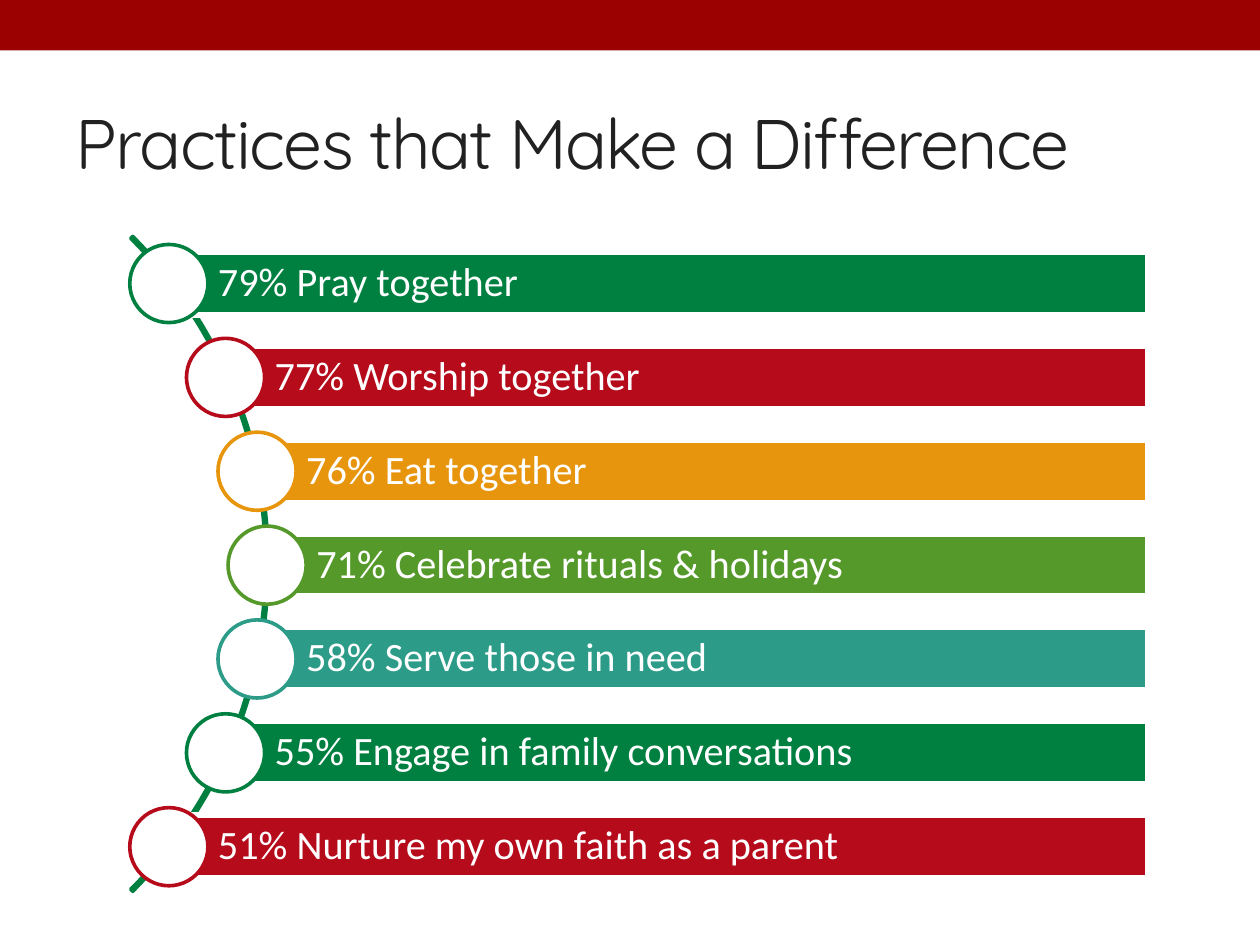
import pptx
import pptx.dml.color
import pptx.enum.shapes
import pptx.enum.text
import pptx.util
from dataclasses import dataclass

Inches = pptx.util.Inches
Pt = pptx.util.Pt
Shapes = pptx.enum.shapes.MSO_SHAPE


@dataclass(frozen=True)
class Theme:
    banner: str = "9B0101"
    title: str = "212121"
    white: str = "FFFFFF"
    green: str = "008040"
    red: str = "B50B1B"
    orange: str = "E8950E"
    lime: str = "55992B"
    teal: str = "2C9C89"
    title_font: str = "Quicksand"
    body_font: str = "Calibri"
    title_size: float = 40
    body_size: float = 23
    thin_line: float = 2.08
    thick_line: float = 3.5


class SlideBuilder:
    def __init__(self, slide, theme):
        self.slide = slide
        self.theme = theme

    def color(self, value):
        return pptx.dml.color.RGBColor.from_string(value)

    def format_text(self, paragraph, font_name, size, color):
        paragraph.alignment = pptx.enum.text.PP_ALIGN.LEFT
        for run in paragraph.runs:
            run.font.name = font_name
            run.font.size = Pt(size)
            run.font.color.rgb = self.color(color)

    def shape(self, kind, left, top, width, height, fill=None, line=None, line_width=0):
        shape = self.slide.shapes.add_shape(
            kind, Inches(left), Inches(top), Inches(width), Inches(height))
        shape.shadow.inherit = False
        if fill:
            shape.fill.solid()
            shape.fill.fore_color.rgb = self.color(fill)
        else:
            shape.fill.background()
        if line:
            shape.line.color.rgb = self.color(line)
            shape.line.width = Pt(line_width)
        else:
            shape.line.fill.background()
        return shape

    def title(self, text, left, top, width, height):
        title = self.slide.shapes.title
        title.left, title.top = Inches(left), Inches(top)
        title.width, title.height = Inches(width), Inches(height)
        frame = title.text_frame
        frame.text = text
        frame.vertical_anchor = pptx.enum.text.MSO_ANCHOR.MIDDLE
        paragraph = frame.paragraphs[0]
        self.format_text(paragraph, self.theme.title_font,
                         self.theme.title_size, self.theme.title)
        # Letter spacing of -1 pt
        paragraph.runs[0].font._element.set("spc", "-100")

    def arc(self, left, top, size):
        arc = self.shape(Shapes.BLOCK_ARC, left, top, size, size,
                         line=self.theme.green, line_width=self.theme.thin_line)
        for index, value in enumerate((189, 27, 0.003)):
            arc.adjustments[index] = value

    def bar(self, text, left, top, width, height, color):
        bar = self.shape(Shapes.RECTANGLE, left, top, width, height, color,
                         self.theme.white, self.theme.thick_line)
        frame = bar.text_frame
        frame.text = text
        frame.word_wrap = True
        frame.vertical_anchor = pptx.enum.text.MSO_ANCHOR.MIDDLE
        frame.margin_left = Inches(0.39)
        frame.margin_top = frame.margin_right = frame.margin_bottom = Inches(0.06)
        paragraph = frame.paragraphs[0]
        paragraph.line_spacing = 0.9
        self.format_text(paragraph, self.theme.body_font,
                         self.theme.body_size, self.theme.white)

    def circle(self, center_x, center_y, size, color):
        self.shape(Shapes.OVAL, center_x - size / 2, center_y - size / 2, size, size,
                   self.theme.white, color, self.theme.thin_line)


def main():
    theme = Theme()
    presentation = pptx.Presentation()
    presentation.slide_width, presentation.slide_height = Inches(10), Inches(7.5)
    slide = presentation.slides.add_slide(presentation.slide_layouts[5])
    builder = SlideBuilder(slide, theme)

    # Banner and title
    builder.shape(Shapes.RECTANGLE, 0, 0, 10, 0.4, theme.banner)
    builder.title("Practices that Make a Difference", 0.5, 0.58, 9, 1.08)

    # Arc behind the list
    builder.arc(-5.22, 0.8, 7.35)

    # Bars with circles, mirrored around the middle row
    practices = [
        ("79% Pray together", theme.green),
        ("77% Worship together", theme.red),
        ("76% Eat together", theme.orange),
        ("71% Celebrate rituals & holidays", theme.lime),
        ("58% Serve those in need", theme.teal),
        ("55% Engage in family conversations", theme.green),
        ("51% Nurture my own faith as a parent", theme.red),
    ]
    left_by_distance = [2.12, 2.04, 1.79, 1.34]
    first_top, row_pitch, bar_height, bar_right = 2, 0.745, 0.5, 9.11
    middle = len(practices) // 2
    for index, (text, color) in enumerate(practices):
        left = left_by_distance[abs(index - middle)]
        top = first_top + index * row_pitch
        builder.bar(text, left, top, bar_right - left, bar_height, color)
        builder.circle(left, top + bar_height / 2, 0.62, color)

    presentation.save("out.pptx")


if __name__ == "__main__":
    main()
